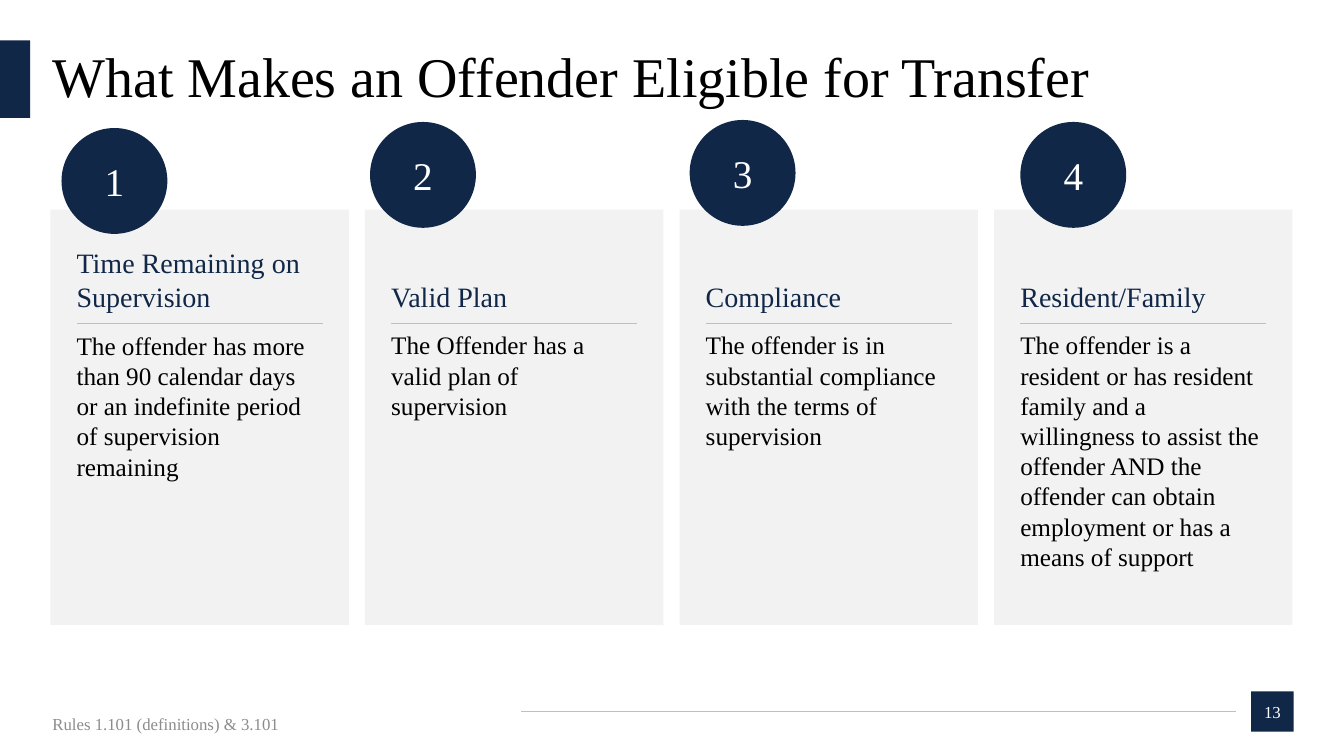
from lxml.etree import SubElement
from pptx import Presentation
from pptx.dml.color import RGBColor
from pptx.enum.shapes import MSO_CONNECTOR, MSO_SHAPE
from pptx.enum.text import MSO_ANCHOR, PP_ALIGN
from pptx.oxml.ns import qn
from pptx.util import Inches, Pt

NAVY = RGBColor(0x10, 0x27, 0x47)
PALE = RGBColor(0xF2, 0xF2, 0xF2)
RULE = RGBColor(0xBF, 0xBF, 0xBF)
GRAY = RGBColor(0x8C, 0x8C, 0x8C)
BLACK = RGBColor(0, 0, 0)
WHITE = RGBColor(255, 255, 255)
FONT = "Times New Roman"

# Heading, body, heading top, badge offset from card left, badge top
CARDS = [
    ("Time Remaining on Supervision",
     "The offender has more than 90 calendar days or an indefinite period "
     "of supervision remaining", 2.44, 0.11, 1.27),
    ("Valid Plan",
     "The Offender has a valid plan of supervision", 2.77, 0.05, 1.21),
    ("Compliance",
     "The offender is in substantial compliance with the terms of "
     "supervision", 2.77, 0.1, 1.19),
    ("Resident/Family",
     "The offender is a resident or has resident family and a willingness "
     "to assist the offender AND the offender can obtain employment or has "
     "a means of support", 2.77, 0.26, 1.21),
]


def write(para, text, size, color):
    para.text = text
    para.font.name = FONT
    para.font.size = Pt(size)
    para.font.color.rgb = color


def add_block(slide, kind, box, fill, label="", size=12):
    block = slide.shapes.add_shape(kind, *map(Inches, box))
    block.shadow.inherit = False
    block.fill.solid()
    block.fill.fore_color.rgb = fill
    block.line.fill.background()
    if label:
        frame = block.text_frame
        frame.vertical_anchor = MSO_ANCHOR.MIDDLE
        para = frame.paragraphs[0]
        para.alignment = PP_ALIGN.CENTER
        write(para, label, size, WHITE)


def add_text(slide, box, anchor=MSO_ANCHOR.TOP):
    frame = slide.shapes.add_textbox(*map(Inches, box)).text_frame
    frame.word_wrap = True
    frame.vertical_anchor = anchor
    frame.margin_left = frame.margin_right = 0
    frame.margin_top = frame.margin_bottom = 0
    return frame


def add_rule(slide, left, top, width):
    rule = slide.shapes.add_connector(
        MSO_CONNECTOR.STRAIGHT, Inches(left), Inches(top),
        Inches(left + width), Inches(top))
    rule.line.color.rgb = RULE
    rule.line.width = Pt(0.5)
    SubElement(rule._element.spPr, qn("a:effectLst"))


def add_header(slide, left, top, width, height):
    add_block(slide, MSO_SHAPE.RECTANGLE, (left, top, 0.3, height), NAVY)
    frame = add_text(slide, (left + 0.52, top, width - 1.02, height),
                     MSO_ANCHOR.MIDDLE)
    para = frame.paragraphs[0]
    para.line_spacing = 0.9
    write(para, "What Makes an Offender Eligible for Transfer", 40, BLACK)


def add_card(slide, left, top, width, height, number, card):
    head, body, start, shift, rise = card
    inset = 0.26
    inner = width - 2 * inset
    add_block(slide, MSO_SHAPE.RECTANGLE, (left, top, width, height), PALE)

    # Heading and body, with the rule between them
    frame = add_text(slide, (left + inset, start, inner,
                             top + height - start - inset))
    title = frame.paragraphs[0]
    write(title, head, 20, NAVY)
    detail = frame.add_paragraph()
    write(detail, body, 18, BLACK)
    title.space_after = detail.space_after = Pt(12)
    add_rule(slide, left + inset, top + 1.13, inner)

    # Numbered badge
    add_block(slide, MSO_SHAPE.OVAL, (left + shift, rise, 1.05, 1.05),
              NAVY, str(number), 28)


def add_cards(slide, left, top, width, height):
    gap = 0.16
    size = (width - gap * (len(CARDS) - 1)) / len(CARDS)
    for index, card in enumerate(CARDS):
        add_card(slide, left + index * (size + gap), top, size, height,
                 index + 1, card)


def add_footer(slide, left, top, width, height):
    frame = add_text(slide, (left, top + 0.12, 4.5, height),
                     MSO_ANCHOR.MIDDLE)
    write(frame.paragraphs[0], "Rules 1.101 (definitions) & 3.101", 12, GRAY)
    add_rule(slide, left + 4.65, top + height / 2, 7.09)
    add_block(slide, MSO_SHAPE.RECTANGLE,
              (left + width - 0.42, top, 0.42, height), NAVY, "13")


def main():
    deck = Presentation()
    deck.slide_width = Inches(13.33)
    deck.slide_height = Inches(7.5)
    slide = deck.slides.add_slide(deck.slide_layouts[6])
    add_header(slide, 0, 0.4, 13.33, 0.77)
    add_cards(slide, 0.5, 2.08, 12.32, 4.12)
    add_footer(slide, 0.52, 6.86, 12.31, 0.4)
    deck.save("out.pptx")


if __name__ == "__main__":
    main()
